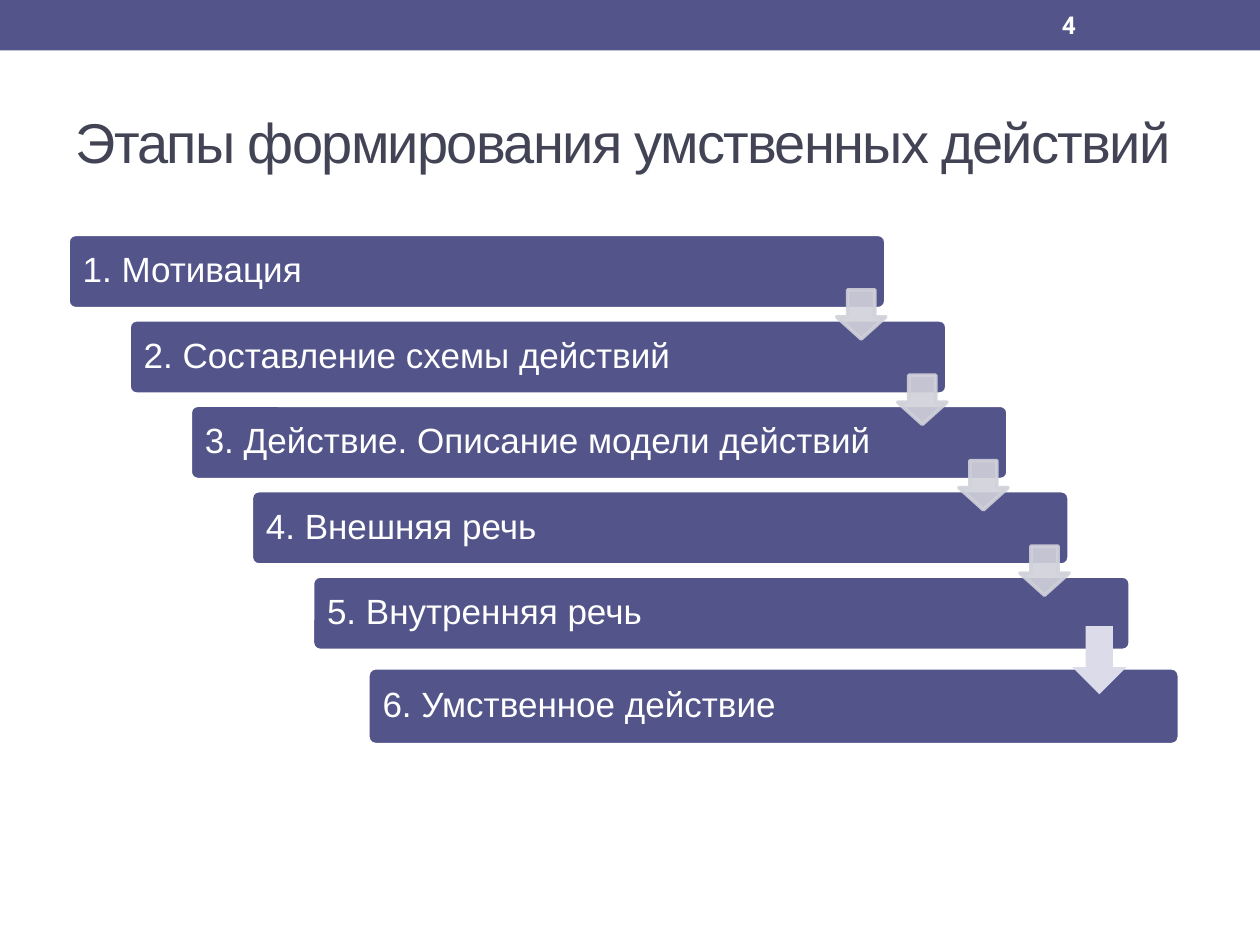
from dataclasses import dataclass

from lxml import etree
from pptx import Presentation
from pptx.dml.color import RGBColor
from pptx.enum.shapes import MSO_SHAPE
from pptx.enum.text import MSO_ANCHOR, PP_ALIGN
from pptx.oxml.ns import qn
from pptx.util import Inches, Pt

RECT = MSO_SHAPE.RECTANGLE
ROUND = MSO_SHAPE.ROUNDED_RECTANGLE
DOWN = MSO_SHAPE.DOWN_ARROW
MIDDLE = MSO_ANCHOR.MIDDLE
LEFT = PP_ALIGN.LEFT


@dataclass(frozen=True)
class Theme:
    main: str = "53548A"
    ink: str = "424456"
    white: str = "FFFFFF"
    arrow: str = "D1D1DA"
    pale: str = "DBDBE9"
    font: str = "Arial"
    mono: str = "Roboto"
    head: int = 32
    body: int = 20
    small: int = 14
    edge: float = 2.08


THEME = Theme()
STEPS = [
    "1. Мотивация",
    "2. Составление схемы действий",
    "3. Действие. Описание модели действий",
    "4. Внешняя речь",
    "5. Внутренняя речь",
]
LAST = "6. Умственное действие"


def apply(item, values):
    for name, value in values.items():
        setattr(item, name, value)


def place(item, box):
    names = ("left", "top", "width", "height")
    apply(item, dict(zip(names, map(Inches, box))))


def write(item, text, size, color, font=THEME.font, bold=False, pad=0.1):
    frame = item.text_frame
    apply(frame, {
        "text": text,
        "word_wrap": True,
        "vertical_anchor": MIDDLE,
        "margin_left": Inches(pad),
        "margin_right": Inches(pad),
    })
    para = frame.paragraphs[0]
    para.alignment = LEFT
    run = para.runs[0]
    apply(run.font, {"name": font, "size": Pt(size), "bold": bold})
    run.font.color.rgb = RGBColor.from_string(color)
    return para


def fade(fill, alpha):
    tone = fill._xPr.find(".//" + qn("a:srgbClr"))
    etree.SubElement(tone, qn("a:alpha"), val=str(alpha * 1000))


def draw(slide, kind, box, color, edge=None, shape=(), alpha=None):
    item = slide.shapes.add_shape(kind, *map(Inches, box))
    item.shadow.inherit = False
    for i, value in enumerate(shape):
        item.adjustments[i] = value
    item.fill.solid()
    item.fill.fore_color.rgb = RGBColor.from_string(color)
    if alpha:
        fade(item.fill, alpha)
    if edge:
        item.line.width = Pt(THEME.edge)
        item.line.fill.solid()
        item.line.color.rgb = RGBColor.from_string(edge)
        if alpha:
            fade(item.line.fill, alpha)
    else:
        item.line.fill.background()
    return item


def add_title(slide, text):
    title = slide.shapes.title
    place(title, (0.5, 0.58, 9, 1.08))
    para = write(title, text, THEME.head, THEME.ink)
    para.runs[0].font._element.set("spc", "-100")


def add_page(slide, number):
    box = slide.shapes.add_textbox(*map(Inches, (8.33, 0.02, 1.17, 0.36)))
    write(box, number, THEME.small, THEME.white, THEME.mono, True)


def add_bar(slide, text, box):
    bar = draw(slide, ROUND, box, THEME.main, THEME.white, (0.1,))
    para = write(bar, text, THEME.body, THEME.white)
    para.line_spacing = 0.9


def add_stairs(slide):
    right, down = 0.485, 0.678
    for i, text in enumerate(STEPS):
        add_bar(slide, text, (0.54 + i * right, 1.86 + i * down, 6.49, 0.59))
    add_bar(slide, LAST, (2.92, 5.3, 6.44, 0.61))
    for i in range(len(STEPS) - 1):
        box = (6.64 + i * right, 2.3 + i * down, 0.39, 0.39)
        draw(slide, DOWN, box, THEME.arrow, THEME.arrow, (0.55, 0.45), 90)
    draw(slide, DOWN, (8.51, 4.97, 0.43, 0.54), THEME.pale)


def main():
    deck = Presentation()
    apply(deck, {"slide_width": Inches(10), "slide_height": Inches(7.5)})
    slide = deck.slides.add_slide(deck.slide_layouts[5])
    draw(slide, RECT, (0, 0, 10, 0.4), THEME.main)
    add_title(slide, "Этапы формирования умственных действий")
    add_page(slide, "4")
    add_stairs(slide)
    deck.save("out.pptx")


if __name__ == "__main__":
    main()
